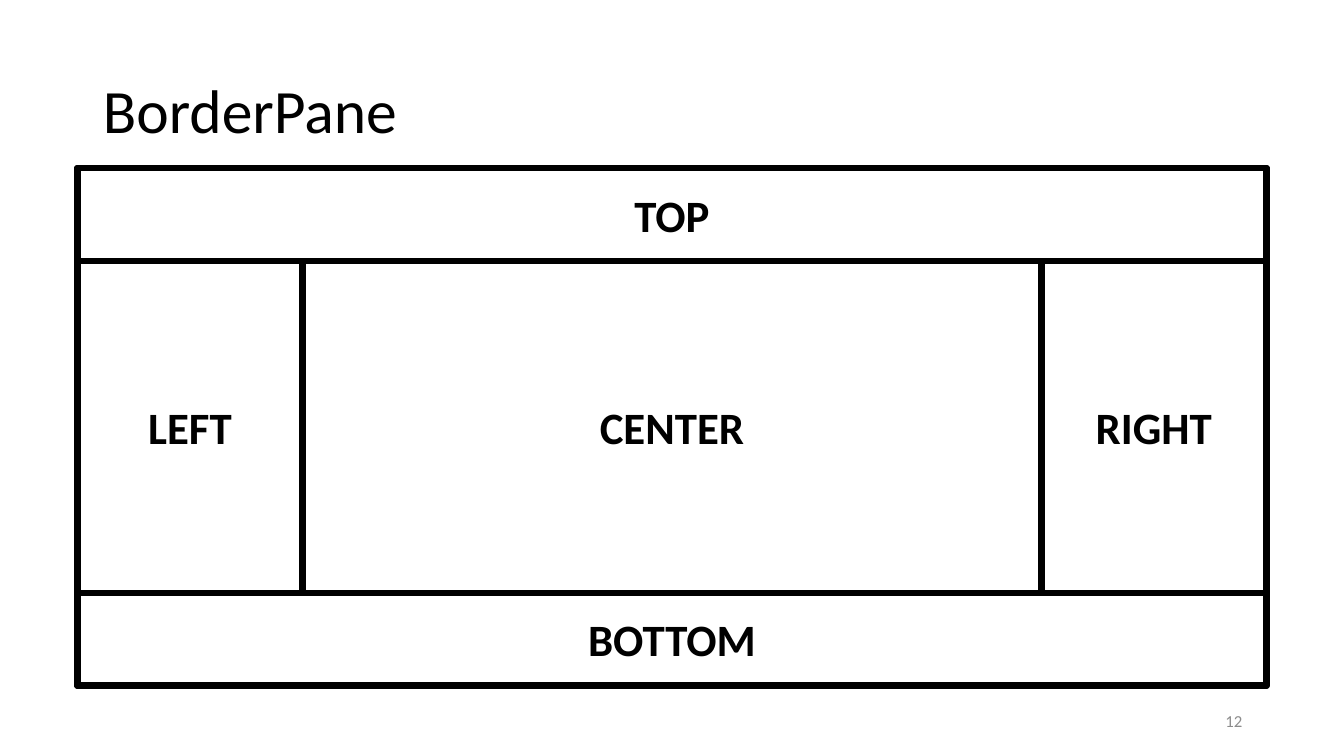
from pptx import Presentation
from pptx.dml.color import RGBColor
from pptx.enum.shapes import MSO_SHAPE as Shape
from pptx.enum.text import MSO_ANCHOR as Anchor, PP_ALIGN as Align
from pptx.util import Inches, Pt

BLACK = RGBColor(0x00, 0x00, 0x00)
WHITE = RGBColor(0xFF, 0xFF, 0xFF)
GREY = RGBColor(0x8C, 0x8C, 0x8C)
FONT = "Calibri"


def write(shape, text, size, color=BLACK, bold=False, align=Align.LEFT,
          space=1.0):
    """Put one formatted line into a shape, centred vertically."""
    frame = shape.text_frame
    frame.word_wrap = True
    frame.vertical_anchor = Anchor.MIDDLE
    line = frame.paragraphs[0]
    line.alignment = align
    line.line_spacing = space
    run = line.add_run()
    run.text = text
    font = run.font
    font.name, font.size, font.bold = FONT, Pt(size), bold
    font.color.rgb = color


def head(slide, box, text):
    """Place the slide title."""
    title = slide.shapes.title
    title.left, title.top, title.width, title.height = map(Inches, box)
    write(title, text, 44, space=0.9)


def pane(slide, box, text):
    """Draw one outlined region with its name."""
    rect = slide.shapes.add_shape(Shape.RECTANGLE, *map(Inches, box))
    rect.shadow.inherit = False
    rect.fill.solid()
    rect.fill.fore_color.rgb = WHITE
    rect.line.color.rgb = BLACK
    rect.line.width = Pt(4.5)
    write(rect, text, 32, bold=True, align=Align.CENTER)


def border(slide, box, side, bar):
    """Lay out the five regions: the bars overlap the sides, the sides the center."""
    x, y, w, h = box
    pane(slide, box, "CENTER")
    pane(slide, (x, y, side, h), "LEFT")
    pane(slide, (x + w - side, y, side, h), "RIGHT")
    pane(slide, (x, y, w, bar), "TOP")
    pane(slide, (x, y + h - bar, w, bar), "BOTTOM")


def number(slide, box, text):
    """Place the page number."""
    note = slide.shapes.add_textbox(*map(Inches, box))
    write(note, text, 12, color=GREY, align=Align.RIGHT)


def main():
    deck = Presentation()
    deck.slide_width, deck.slide_height = Inches(13.33), Inches(7.5)
    slide = deck.slides.add_slide(deck.slide_layouts[5])
    head(slide, (0.92, 0.4, 11.5, 1.45), "BorderPane")
    number(slide, (9.42, 6.95, 3, 0.4), "12")
    border(slide, (0.77, 1.67, 11.79, 5.13), side=2.23, bar=0.92)
    deck.save("out.pptx")


if __name__ == "__main__":
    main()
